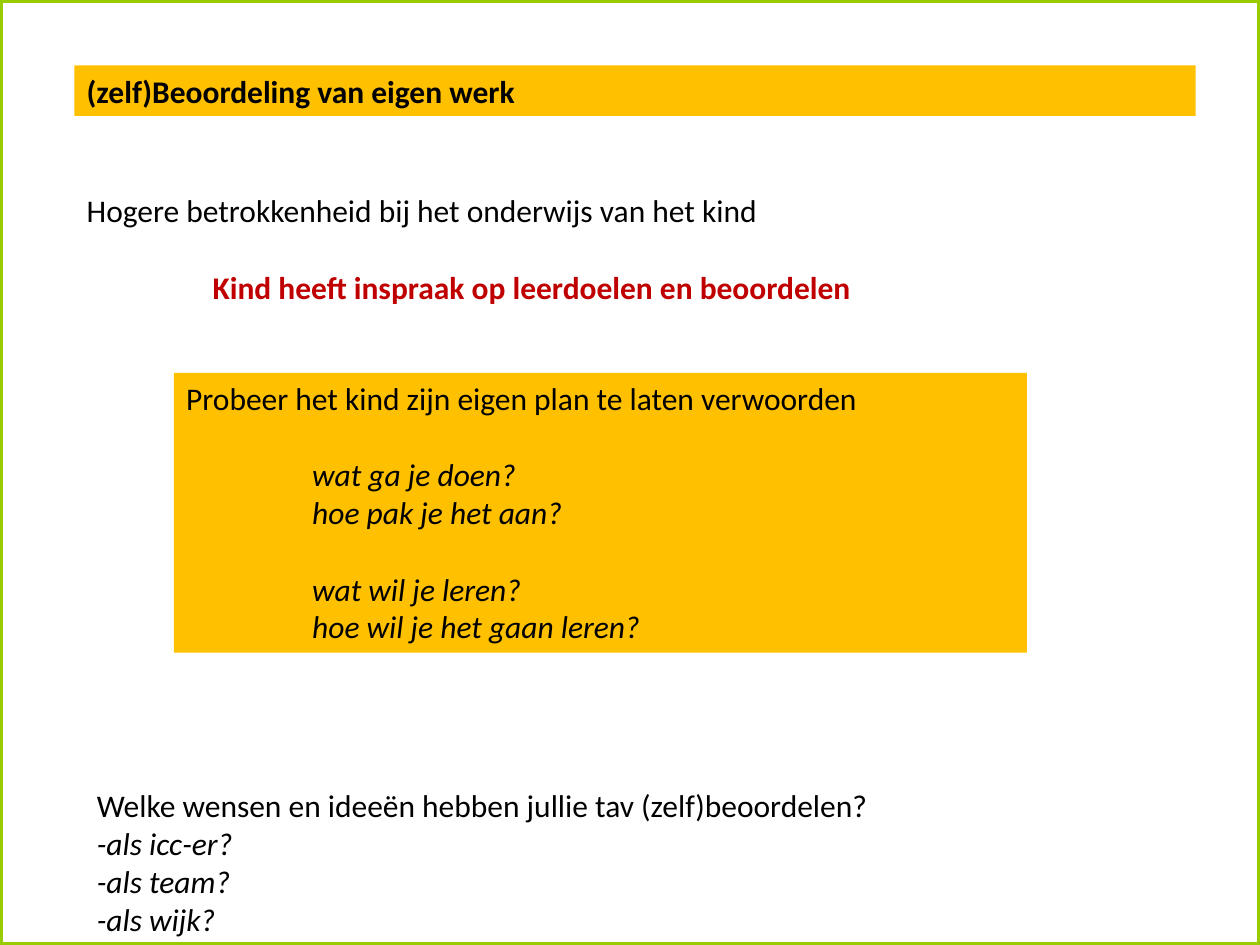
from dataclasses import dataclass

from pptx import Presentation
from pptx.dml.color import RGBColor
from pptx.enum.shapes import MSO_SHAPE
from pptx.enum.text import MSO_ANCHOR, PP_ALIGN
from pptx.util import Inches, Pt


@dataclass(frozen=True)
class Theme:
    font: str = "Calibri"
    size: int = 18
    gap: int = 22  # one empty line, in points
    border: int = 3
    ink: str = "000000"
    paper: str = "FFFFFF"
    band: str = "FFC000"
    accent: str = "C00000"
    frame: str = "99CC00"


THEME = Theme()
COLS, ROWS = 100, 75


def add_text(tf, text, first=False, color=THEME.ink, bold=False, italic=False,
             indent=0, before=0):
    """Add one formatted paragraph; indent is in inches, before in points."""
    p = tf.paragraphs[0] if first else tf.add_paragraph()
    p.alignment = PP_ALIGN.LEFT
    p.space_before = Pt(before)
    if indent:
        p._p.get_or_add_pPr().set("marL", str(Inches(indent)))
    r = p.add_run()
    r.text = text
    r.font.name, r.font.size = THEME.font, Pt(THEME.size)
    r.font.bold, r.font.italic = bold, italic
    r.font.color.rgb = RGBColor.from_string(color)


class SlideBuilder:
    def __init__(self, prs, theme):
        self.theme = theme
        self.s = prs.slides.add_slide(prs.slide_layouts[6])
        self.cell = prs.slide_width / COLS, prs.slide_height / ROWS

    def place(self, col, row, cols, rows):
        w, h = self.cell
        return [round(v) for v in (col * w, row * h, cols * w, rows * h)]

    def box(self, *grid, fill, line=None):
        sp = self.s.shapes.add_shape(MSO_SHAPE.RECTANGLE, *self.place(*grid))
        sp.shadow.inherit = False
        sp.fill.solid()
        sp.fill.fore_color.rgb = RGBColor.from_string(fill)
        if line:
            sp.line.color.rgb = RGBColor.from_string(line)
            sp.line.width = Pt(self.theme.border)
        else:
            sp.line.fill.background()
        return sp

    def fill_text(self, sp, lines):
        tf = sp.text_frame
        tf.word_wrap = True
        tf.vertical_anchor = MSO_ANCHOR.TOP
        for i, (text, style) in enumerate(lines):
            add_text(tf, text, first=i == 0, **style)

    def panel(self, *grid, lines):
        self.fill_text(self.box(*grid, fill=self.theme.band), lines)

    def text(self, *grid, lines):
        self.fill_text(self.s.shapes.add_textbox(*self.place(*grid)), lines)


def main():
    prs = Presentation()
    prs.slide_width, prs.slide_height = Inches(10), Inches(7.5)
    slide = SlideBuilder(prs, THEME)

    # Frame and title band
    slide.box(0, 0, COLS, ROWS, fill=THEME.paper, line=THEME.frame)
    slide.panel(5.9, 5.2, 89, 4,
                lines=[("(zelf)Beoordeling van eigen werk", dict(bold=True))])

    # Statement
    slide.text(5.9, 14.7, 75.6, 16.2, lines=[
        ("Hogere betrokkenheid bij het onderwijs van het kind", {}),
        ("Kind heeft inspraak op leerdoelen en beoordelen",
         dict(color=THEME.accent, bold=True, indent=1, before=THEME.gap)),
    ])

    # Closing questions
    slide.text(6.7, 61.9, 88.2, 13.1, lines=[
        ("Welke wensen en ideeën hebben jullie tav (zelf)beoordelen?", {}),
        *((f"-als {who}?", dict(italic=True))
          for who in ("icc-er", "team", "wijk")),
    ])

    # Questions for the child
    question = dict(italic=True, indent=1)
    opening = dict(question, before=THEME.gap)
    slide.panel(13.8, 29.6, 67.7, 22.2, lines=[
        ("Probeer het kind zijn eigen plan te laten verwoorden", {}),
        ("wat ga je doen?", opening),
        ("hoe pak je het aan?", question),
        ("wat wil je leren?", opening),
        ("hoe wil je het gaan leren?", question),
    ])

    prs.save("out.pptx")


if __name__ == "__main__":
    main()
